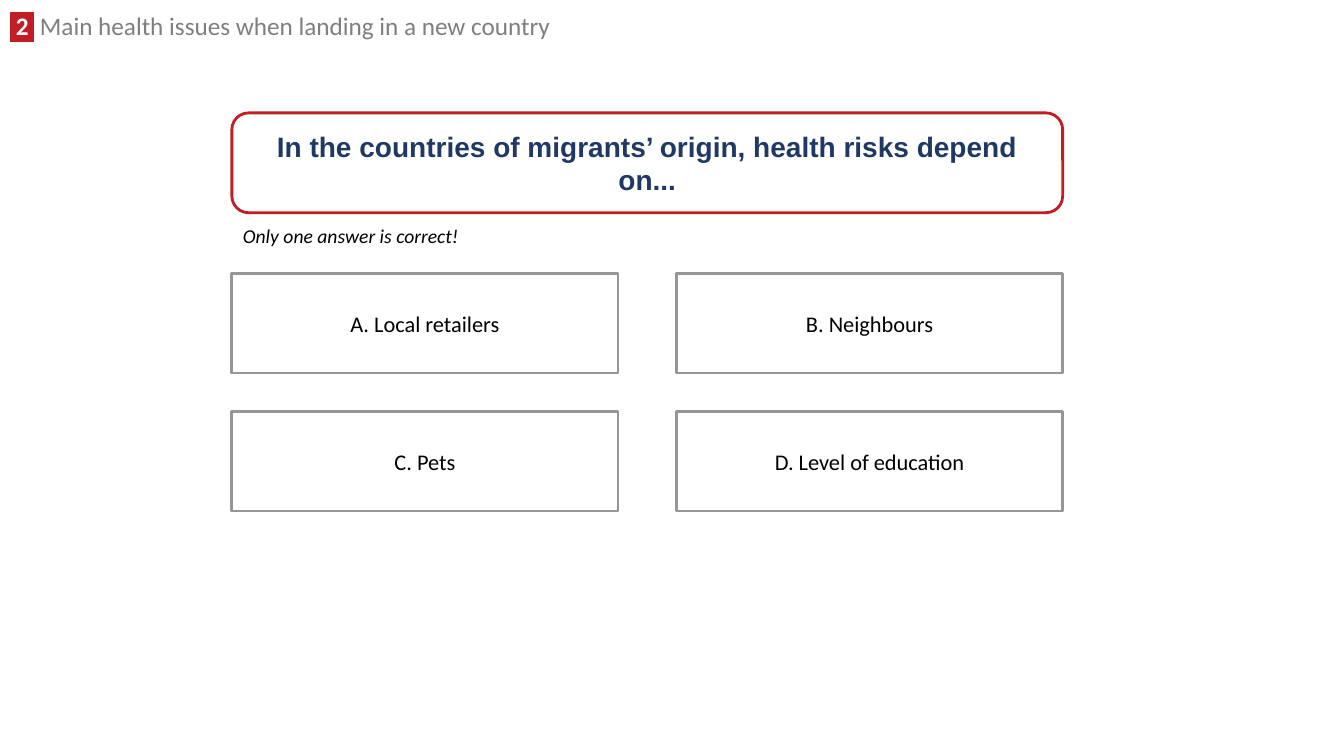
from lxml.etree import SubElement
from pptx import Presentation
from pptx.dml.color import RGBColor
from pptx.enum.shapes import MSO_SHAPE
from pptx.enum.text import MSO_ANCHOR, MSO_AUTO_SIZE, PP_ALIGN
from pptx.oxml.ns import qn
from pptx.util import Inches, Pt

NUMBER = " 2 "
HEADING = " Main health issues when landing in a new country"
QUESTION = "In the countries of migrants’ origin, health risks depend on..."
HINT = "Only one answer is correct!"
ANSWERS = ["A. Local retailers", "B. Neighbours", "C. Pets", "D. Level of education"]

COLORS = {"red": "C01E24", "navy": "203864", "gray": "7F7F7F",
          "border": "969696", "white": "FFFFFF", "black": "000000"}

LEFT, QUESTION_TOP, ANSWER_TOP = 2.3, 1.12, 2.71
QUESTION_W, ANSWER_W, BOX_H = 8.24, 3.83, 0.99
COL_STEP, ROW_STEP = 4.41, 1.37


def rgb(name):
    return RGBColor.from_string(COLORS[name])


def style(p, font, size, color=None, bold=False, italic=False):
    p.font.name = font
    p.font.size = Pt(size)
    p.font.bold = bold
    p.font.italic = italic
    if color:
        p.font.color.rgb = rgb(color)


def add_box(slide, kind, x, y, w, text, line, font, size, color, bold=False):
    sp = slide.shapes.add_shape(kind, Inches(x), Inches(y), Inches(w), Inches(BOX_H))
    sp.shadow.inherit = False
    sp.fill.solid()
    sp.fill.fore_color.rgb = rgb("white")
    sp.line.color.rgb = rgb(line)
    sp.line.width = Pt(2)
    tf = sp.text_frame
    tf.word_wrap = True
    tf.vertical_anchor = MSO_ANCHOR.MIDDLE
    p = tf.paragraphs[0]
    p.text = text
    p.alignment = PP_ALIGN.CENTER
    style(p, font, size, color, bold)


def add_heading(slide):
    title = slide.shapes.title
    title.left, title.top = Inches(0), Inches(0.11)
    title.width, title.height = Inches(5.71), Inches(0.35)
    tf = title.text_frame
    tf.word_wrap = True
    tf.auto_size = MSO_AUTO_SIZE.NONE
    tf.vertical_anchor = MSO_ANCHOR.TOP
    p = tf.paragraphs[0]
    p.alignment = PP_ALIGN.LEFT
    p.line_spacing = 0.8
    style(p, "Calibri", 18)
    for text, color, bold in [(NUMBER, "white", True), (HEADING, "gray", False)]:
        r = p.add_run()
        r.text = text
        r.font.bold = bold
        r.font.color.rgb = rgb(color)
    highlight = SubElement(p.runs[0].font._element, qn("a:highlight"))
    SubElement(highlight, qn("a:srgbClr"), val=COLORS["red"])


def add_hint(slide):
    box = slide.shapes.add_textbox(Inches(2.31), Inches(2.17), Inches(2.36), Inches(0.34))
    tf = box.text_frame
    tf.word_wrap = True
    p = tf.paragraphs[0]
    p.text = HINT
    style(p, "Calibri", 14, "black", italic=True)


def main():
    prs = Presentation()
    prs.slide_width, prs.slide_height = Inches(13.33), Inches(7.5)
    slide = prs.slides.add_slide(prs.slide_layouts[5])
    add_heading(slide)
    add_box(slide, MSO_SHAPE.ROUNDED_RECTANGLE, LEFT, QUESTION_TOP, QUESTION_W,
            QUESTION, "red", "Arial", 20, "navy", True)
    add_hint(slide)
    for i, answer in enumerate(ANSWERS):
        row, col = divmod(i, 2)
        add_box(slide, MSO_SHAPE.RECTANGLE, LEFT + col * COL_STEP,
                ANSWER_TOP + row * ROW_STEP, ANSWER_W,
                answer, "border", "Calibri", 16, "black")
    prs.save("out.pptx")


if __name__ == "__main__":
    main()
